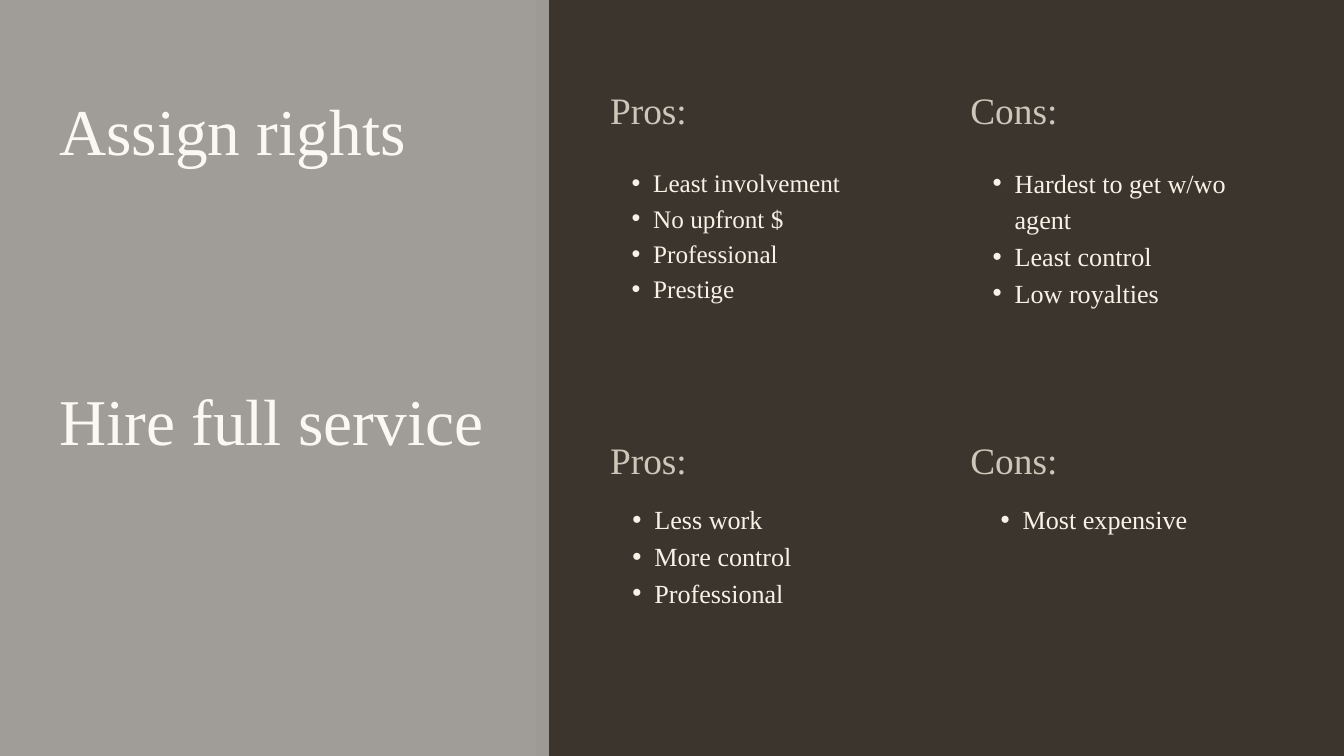
from lxml.etree import SubElement
from pptx import Presentation
from pptx.dml.color import RGBColor
from pptx.enum.shapes import MSO_SHAPE
from pptx.enum.text import MSO_ANCHOR, MSO_AUTO_SIZE, PP_ALIGN
from pptx.oxml.ns import qn
from pptx.util import Emu, Pt

PX = 9144  # 100 px to the inch
FONT = "Times New Roman"
COLORS = {"back": "3B352E", "cream": "F6F2E5", "sand": "CBC8BA", "veil": "FFFFFF"}

# Left, top, height, point size, items
LISTS = [
    (908, 242, 208, 27, ["Least involvement", "No upfront $", "Professional", "Prestige"]),
    (1444, 241, 216, 28, ["Hardest to get w/wo agent", "Least control", "Low royalties"]),
    (908, 742, 162, 28, ["Less work", "More control", "Professional"]),
    (1456, 742, 53, 28, ["Most expensive"]),
]


def px(n):
    return Emu(n * PX)


def color(name):
    return RGBColor.from_string(COLORS[name])


def place(shape, left, top, width, height):
    shape.left, shape.top = px(left), px(top)
    shape.width, shape.height = px(width), px(height)


def bullet(para, size):
    hang = round(size * 1.18)
    para.level = 1
    props = para._p.get_or_add_pPr()
    props.set("marL", str(px(2 * hang)))
    props.set("indent", str(px(-hang)))
    SubElement(props, qn("a:buFont")).set("typeface", "Arial")
    SubElement(props, qn("a:buChar")).set("char", "•")


def write(shape, lines, size, tone, lead, dots=False):
    frame = shape.text_frame
    frame.margin_left = frame.margin_right = 0
    frame.margin_top = frame.margin_bottom = 0
    frame.word_wrap = True
    frame.auto_size = MSO_AUTO_SIZE.NONE
    frame.vertical_anchor = MSO_ANCHOR.TOP
    frame.text = "\n".join(lines)
    for para in frame.paragraphs:
        if dots:
            bullet(para, size)
        para.alignment = PP_ALIGN.LEFT
        para.line_spacing = Pt(size * lead)
        para.font.name = FONT
        para.font.size = Pt(size)
        para.font.color.rgb = color(tone)


def add_text(slide, box, *text, **style):
    shape = slide.shapes.add_textbox(*map(px, box))
    write(shape, *text, **style)


def add_veil(slide, width, alpha):
    shape = slide.shapes.add_shape(MSO_SHAPE.RECTANGLE, 0, 0, px(width), px(1125))
    shape.shadow.inherit = False
    shape.line.fill.background()
    shape.fill.solid()
    shape.fill.fore_color.rgb = color("veil")
    tint = shape._element.spPr.find(".//" + qn("a:srgbClr"))
    SubElement(tint, qn("a:alpha")).set("val", str(alpha * 1000))


def main():
    deck = Presentation()
    deck.slide_width, deck.slide_height = px(2000), px(1125)
    slide = deck.slides.add_slide(deck.slide_layouts[5])
    slide.background.fill.solid()
    slide.background.fill.fore_color.rgb = color("back")

    # Option names
    title = slide.shapes.title
    place(title, 88, 115, 698, 132)
    write(title, ["Assign rights"], 70, "cream", 1.4)
    add_text(slide, (88, 547, 698, 268), ["Hire full service"], 70, "cream", 1.4)
    add_veil(slide, 797, 3)

    # Pros and cons of each option
    for top in (130, 651):
        for left, head in ((908, "Pros:"), (1444, "Cons:")):
            add_text(slide, (left, top, 443, 68), [head], 40, "sand", 1.2)
    for left, top, height, size, items in LISTS:
        add_text(slide, (left, top, 443, height), items, size, "cream", 1.4, dots=True)

    # Light panel over the option names
    add_veil(slide, 817, 50)
    deck.save("out.pptx")


if __name__ == "__main__":
    main()
